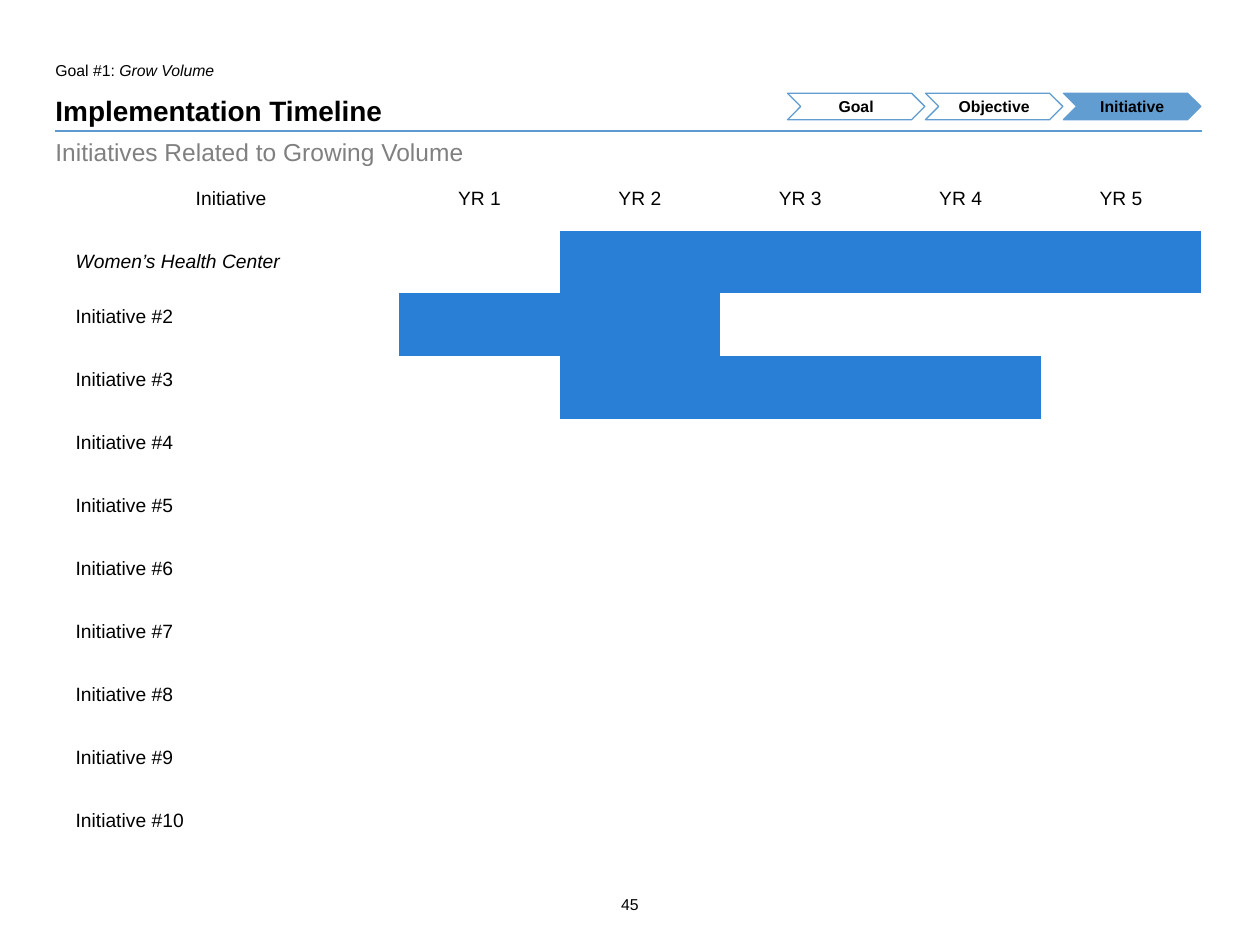
"""Build the implementation timeline slide."""
import pptx
import pptx.dml.color
import pptx.enum.shapes
import pptx.enum.text
import pptx.oxml
import pptx.util

WIDTH, HEIGHT = pptx.util.Inches(10), pptx.util.Inches(7.5)
COLORS = {"text": "000000", "muted": "808080", "rule": "5D9ACF",
          "step": "629DD1", "bar": "297FD5"}
PLAIN = "{2D5ABB26-0587-4C30-8999-92F81FD0307C}"
ALIGN = pptx.enum.text.PP_ALIGN
ANCHOR = pptx.enum.text.MSO_ANCHOR
LEFT, SPAN = 4.4, 90.9
STEPS = ["Goal", "Objective", "Initiative"]
HEADS = ["Initiative"] + [f"YR {year}" for year in range(1, 6)]
PLANS = ["Women’s Health Center"] + [f"Initiative #{num}" for num in range(2, 11)]
BARS = {1: (2, 5), 2: (1, 2), 3: (2, 4)}


def across(share):
    """Turn a percentage of the slide width into a length."""
    return round(WIDTH * share / 100)


def down(share):
    """Turn a percentage of the slide height into a length."""
    return round(HEIGHT * share / 100)


def area(left, top, width, height):
    """Turn percentages into a position and size."""
    return across(left), down(top), across(width), down(height)


def color(name):
    """Look up a named colour."""
    return pptx.dml.color.RGBColor.from_string(COLORS[name])


def style(para, size, tone="text", bold=False, italic=False, align=ALIGN.LEFT):
    """Set the font and alignment of a paragraph."""
    para.alignment = align
    font = para.font
    font.name, font.size = "Arial", pptx.util.Pt(size)
    font.bold, font.italic = bold, italic
    font.color.rgb = color(tone)


def inset(item, side, edge):
    """Set the margins of a text frame or table cell."""
    item.margin_left = item.margin_right = pptx.util.Inches(side)
    item.margin_top = item.margin_bottom = pptx.util.Inches(edge)


def label(slide, box, text, size, side=0, edge=0.04, anchor=ANCHOR.TOP, **look):
    """Add a text box and return its paragraph."""
    frame = slide.shapes.add_textbox(*box).text_frame
    frame.word_wrap = True
    frame.vertical_anchor = anchor
    inset(frame, side, edge)
    para = frame.paragraphs[0]
    para.add_run().text = text
    style(para, size, **look)
    return para


def rule(slide, left, right, top):
    """Add the horizontal line below the title."""
    line = slide.shapes.add_connector(
        pptx.enum.shapes.MSO_CONNECTOR.STRAIGHT,
        across(left), down(top), across(right), down(top))
    line.line.color.rgb = color("rule")
    line.line.width = pptx.util.Pt(0.75)
    props = line._element.spPr
    props.append(props.makeelement(pptx.oxml.ns.qn("a:effectLst"), {}))


def step(slide, box, text, active):
    """Add one chevron of the progress trail."""
    shape = slide.shapes.add_shape(pptx.enum.shapes.MSO_SHAPE.CHEVRON, *box)
    shape.shadow.inherit = False
    if active:
        shape.fill.solid()
        shape.fill.fore_color.rgb = color("step")
    else:
        shape.fill.background()
    shape.line.color.rgb = color("step")
    shape.line.width = pptx.util.Pt(0.75)
    frame = shape.text_frame
    frame.word_wrap = False
    frame.vertical_anchor = ANCHOR.MIDDLE
    inset(frame, 0.14, 0.07)
    frame.text = text
    style(frame.paragraphs[0], 9, bold=True, align=ALIGN.CENTER)


def write(cell, text, middle, **look):
    """Write text into a table cell."""
    cell.text = text
    cell.vertical_anchor = ANCHOR.MIDDLE if middle else ANCHOR.TOP
    inset(cell, 0.1, 0.1)
    style(cell.text_frame.paragraphs[0], 11, **look)


def chart(slide, box):
    """Add the timeline table with its coloured spans."""
    table = slide.shapes.add_table(len(PLANS) + 1, len(HEADS), *box).table
    table.first_row = table.horz_banding = False
    table._tbl.tblPr.find(pptx.oxml.ns.qn("a:tableStyleId")).text = PLAIN
    for col, head in enumerate(HEADS):
        table.columns[col].width = across(12.73 if col else 26.7)
        write(table.cell(0, col), head, True, align=ALIGN.CENTER)
    for row, plan in enumerate(PLANS, 1):
        write(table.cell(row, 0), plan, row == 1, italic=row == 1)
        first, last = BARS.get(row, (0, 0))
        for col in range(1, len(HEADS)):
            fill = table.cell(row, col).fill
            if first <= col <= last:
                fill.solid()
                fill.fore_color.rgb = color("bar")
            else:
                fill.background()


def main():
    """Build and save the slide."""
    deck = pptx.Presentation()
    deck.slide_width, deck.slide_height = WIDTH, HEIGHT
    slide = deck.slides.add_slide(deck.slide_layouts[6])
    rule(slide, LEFT, LEFT + 91, 13.87)
    label(slide, area(46.6, 94.13, 6.8, 3.47), "45", 9, side=0.04, align=ALIGN.CENTER)
    goal = label(slide, area(LEFT, 5.87, 28.9, 2.67), "Goal #1: ", 9)
    name = goal.add_run()
    name.text = "Grow Volume"
    name.font.italic = True
    label(slide, area(LEFT, 9.87, SPAN, 3.6), "Implementation Timeline", 16,
          edge=0, anchor=ANCHOR.BOTTOM, bold=True)
    chart(slide, area(5, 17.73, 90.3, 73.33))
    for index, text in enumerate(STEPS):
        step(slide, area(62.5 + 10.95 * index, 9.87, 10.9, 2.8), text,
             text == STEPS[-1])
    label(slide, area(LEFT, 14, SPAN, 4), "Initiatives Related to Growing Volume",
          14, tone="muted")
    deck.save("out.pptx")


if __name__ == "__main__":
    main()
